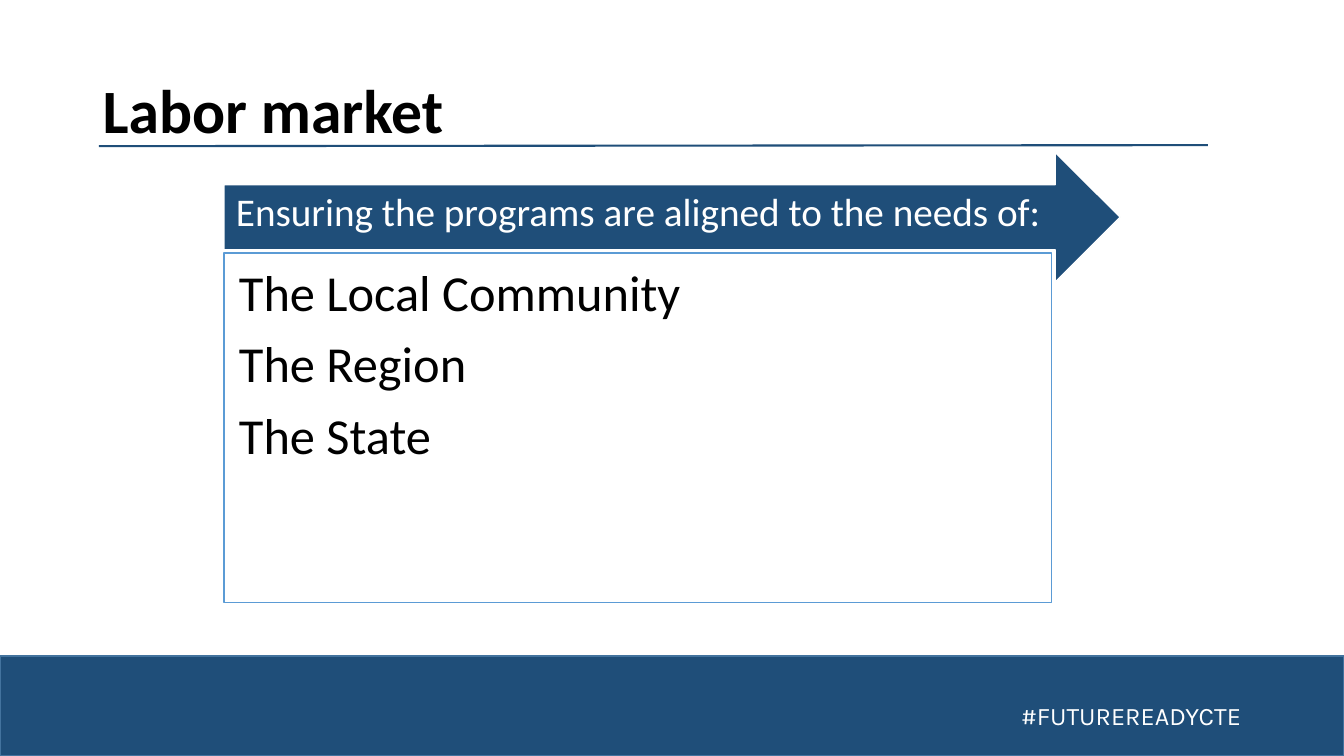
from lxml import etree
from pptx import Presentation
from pptx import util as u
from pptx.dml.color import RGBColor
from pptx.enum import shapes, text
from pptx.oxml.ns import qn

PX = 9144  # EMU per px, 100 px to the inch
NAVY = RGBColor(0x1F, 0x4E, 0x79)
STEEL = RGBColor(0x43, 0x73, 0x9E)
SKY = RGBColor(0x5B, 0x9B, 0xD5)
WHITE = RGBColor(255, 255, 255)
BLACK = RGBColor(0, 0, 0)


def write_text(shape, lines, size, color=BLACK, font="Calibri", bold=False,
               anchor=text.MSO_ANCHOR.TOP, insets=(10, 5, 10, 5),
               wrap=True, spacing=0.9, after=0):
    frame = shape.text_frame
    frame.word_wrap = wrap
    frame.vertical_anchor = anchor
    (frame.margin_left, frame.margin_top,
     frame.margin_right, frame.margin_bottom) = [inset * PX for inset in insets]
    frame.text = "\n".join(lines)
    for paragraph in frame.paragraphs:
        paragraph.alignment = text.PP_ALIGN.LEFT
        paragraph.line_spacing = spacing
        paragraph.space_after = u.Pt(after)
        paragraph.font.name = font
        paragraph.font.size = u.Pt(size)
        paragraph.font.bold = bold
        paragraph.font.color.rgb = color


class SlideBuilder:
    def __init__(self, slide):
        self.slide = slide

    def shape(self, kind, box, fill, line):
        shape = self.slide.shapes.add_shape(kind, *[side * PX for side in box])
        shape.shadow.inherit = False
        shape.fill.solid()
        shape.fill.fore_color.rgb = fill
        shape.line.color.rgb = line
        shape.line.width = u.Pt(1)
        return shape

    def label(self, box, lines, size, **style):
        label = self.slide.shapes.add_textbox(*[side * PX for side in box])
        write_text(label, lines, size, **style)

    def line(self, start, end, color, width):
        points = [value * PX for value in (*start, *end)]
        line = self.slide.shapes.add_connector(shapes.MSO_CONNECTOR.STRAIGHT, *points)
        line.line.color.rgb = color
        line.line.width = u.Pt(width)
        etree.SubElement(line._element.spPr, qn("a:effectLst"))


def main():
    presentation = Presentation()
    presentation.slide_width = 1333 * PX
    presentation.slide_height = 750 * PX
    builder = SlideBuilder(presentation.slides.add_slide(presentation.slide_layouts[6]))
    middle = text.MSO_ANCHOR.MIDDLE

    # Footer band
    builder.shape(shapes.MSO_SHAPE.RECTANGLE, (0, 651, 1333, 99), NAVY, STEEL)
    builder.label((1003, 690, 239, 40), ["#FUTUREREADYCTE"], 18, color=WHITE,
                  font="Karla", wrap=False, spacing=1.0)

    # Title and rule
    builder.label((92, 40, 1150, 145), ["Labor market"], 44, bold=True, anchor=middle)
    builder.line((98, 145), (1198, 144), NAVY, 1.5)

    # Arrow heading
    builder.shape(shapes.MSO_SHAPE.RIGHT_ARROW, (222, 151, 889, 129), NAVY, WHITE)
    builder.label((222, 184, 857, 65),
                  ["Ensuring the programs are aligned to the needs of:"], 28,
                  color=WHITE, anchor=middle, insets=(12, 12, 28, 21))

    # List of needs
    needs = builder.shape(shapes.MSO_SHAPE.RECTANGLE, (222, 251, 821, 347), WHITE, SKY)
    write_text(needs, ["The Local Community", "The Region", "The State"], 36,
               insets=(15, 15, 15, 15), after=12)

    presentation.save("out.pptx")


if __name__ == "__main__":
    main()
